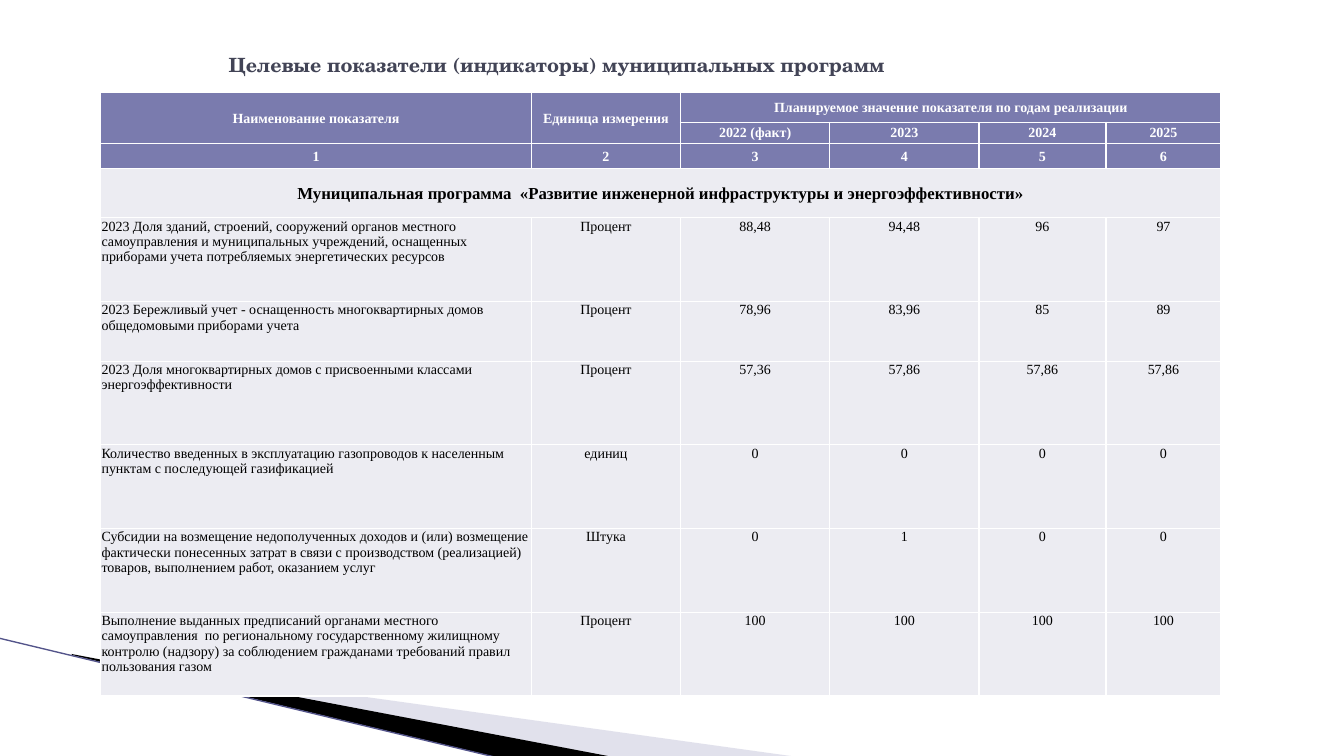
"""Build the slide with target indicators of municipal programmes."""
from lxml import etree
from pptx import Presentation
from pptx.dml.color import RGBColor
from pptx.enum.shapes import MSO_CONNECTOR
from pptx.enum.text import MSO_ANCHOR, PP_ALIGN
from pptx.oxml import parse_xml
from pptx.oxml.ns import qn
from pptx.util import Cm, Pt

STRAIGHT = MSO_CONNECTOR.STRAIGHT
MIDDLE, TOP = MSO_ANCHOR.MIDDLE, MSO_ANCHOR.TOP
LEFT, CENTER = PP_ALIGN.LEFT, PP_ALIGN.CENTER

WHITE = RGBColor(0xFF, 0xFF, 0xFF)
BLACK = RGBColor(0x00, 0x00, 0x00)
TITLE_INK = RGBColor(0x42, 0x44, 0x56)
HEADER_FILL = RGBColor(0x7A, 0x7B, 0xAE)
BODY_FILL = RGBColor(0xEC, 0xEC, 0xF2)
LILAC = RGBColor(0xB6, 0xB6, 0xD1)
VIOLET = RGBColor(0x53, 0x54, 0x8A)

HEADER_ROWS = 3
PROGRAM_ROW = 3
COL_WIDTHS = [10.85, 3.76, 3.76, 3.76, 3.2, 2.9]
ROW_HEIGHTS = [0.74, 0.53, 0.64, 1.24, 2.11, 1.5, 2.11, 2.11, 2.11, 2.11]
ROWS = [
    ["Наименование показателя", "Единица измерения",
     "Планируемое значение показателя по годам реализации", "", "", ""],
    ["", "", "2022 (факт)", "2023", "2024", "2025"],
    ["1", "2", "3", "4", "5", "6"],
    ["Муниципальная программа  «Развитие инженерной инфраструктуры и энергоэффективности»",
     "", "", "", "", ""],
    ["2023 Доля зданий, строений, сооружений органов местного самоуправления и "
     "муниципальных учреждений, оснащенных приборами учета потребляемых "
     "энергетических ресурсов", "Процент", "88,48", "94,48", "96", "97"],
    ["2023 Бережливый учет - оснащенность многоквартирных домов общедомовыми "
     "приборами учета", "Процент", "78,96", "83,96", "85", "89"],
    ["2023 Доля многоквартирных домов с присвоенными классами энергоэффективности",
     "Процент", "57,36", "57,86", "57,86", "57,86"],
    ["Количество введенных в эксплуатацию газопроводов к населенным пунктам с "
     "последующей газификацией", "единиц", "0", "0", "0", "0"],
    ["Субсидии на возмещение недополученных доходов и (или) возмещение фактически "
     "понесенных затрат в связи с производством (реализацией) товаров, выполнением "
     "работ, оказанием услуг", "Штука", "0", "1", "0", "0"],
    ["Выполнение выданных предписаний органами местного самоуправления  по "
     "региональному государственному жилищному контролю (надзору) за соблюдением "
     "граждан" "ами требований правил пользования газом".replace("\n", ""),
     "Процент", "100", "100", "100", "100"],
]
MERGES = [((0, 0), (1, 0)), ((0, 1), (1, 1)), ((0, 2), (0, 5)), ((3, 0), (3, 5))]
WEDGES = [
    (LILAC, 40, [(1.85, 16.54), (20.14, 19.08), (15.44, 19.08), (1.85, 16.51)]),
    (BLACK, 100, [(1.8, 16.48), (15.47, 19.08), (12.6, 19.1), (1.83, 16.51)]),
]
BORDER = (
    '<a:{} xmlns:a="http://schemas.openxmlformats.org/drawingml/2006/main" w="12700">'
    '<a:solidFill><a:srgbClr val="FFFFFF"/></a:solidFill></a:{}>'
)


def add_run(p, text, font, size, color, bold):
    p.font.size = Pt(size)
    if text:
        r = p.add_run()
        r.text = text
        r.font.name = font
        r.font.size = Pt(size)
        r.font.bold = bold
        r.font.color.rgb = color


prs = Presentation()
prs.slide_width, prs.slide_height = Cm(33.87), Cm(19.05)
s = prs.slides.add_slide(prs.slide_layouts[5])

for color, opacity, points in WEDGES:
    corners = [(Cm(x), Cm(y)) for x, y in points]
    builder = s.shapes.build_freeform(*corners[0], scale=1.0)
    builder.add_line_segments(corners[1:], close=True)
    sp = builder.convert_to_shape()
    sp.shadow.inherit = False
    sp.fill.solid()
    sp.fill.fore_color.rgb = color
    sp.line.fill.background()
    if opacity < 100:
        clr = sp.fill._xPr.find(qn("a:solidFill"))[0]
        etree.SubElement(clr, qn("a:alpha"), val=str(opacity * 1000))

edge = s.shapes.add_connector(STRAIGHT, Cm(-0.03), Cm(16.08), Cm(12.57), Cm(19.1))
edge.line.color.rgb = VIOLET
edge.line.width = Pt(0.95)
etree.SubElement(edge._element.spPr, qn("a:effectLst"))

title = s.shapes.title
title.left, title.top, title.width, title.height = Cm(5.51), Cm(0.76), Cm(22.86), Cm(1.75)
tf = title.text_frame
tf.vertical_anchor = MIDDLE
p = tf.paragraphs[0]
p.alignment = LEFT
add_run(p, "Целевые показатели (индикаторы) муниципальных программ",
        "TeX Gyre Schola", 14, TITLE_INK, True)

table = s.shapes.add_table(len(ROWS), len(COL_WIDTHS), Cm(2.54), Cm(2.34),
                           Cm(sum(COL_WIDTHS)), Cm(sum(ROW_HEIGHTS))).table
for column, width in zip(table.columns, COL_WIDTHS):
    column.width = Cm(width)
for row, height in zip(table.rows, ROW_HEIGHTS):
    row.height = Cm(height)
for first, last in MERGES:
    table.cell(*first).merge(table.cell(*last))

for i, texts in enumerate(ROWS):
    is_header = i < HEADER_ROWS
    is_heading = i <= PROGRAM_ROW
    for j, text in enumerate(texts):
        cell = table.cell(i, j)
        cell.margin_left = cell.margin_right = cell.margin_top = Cm(0.02)
        cell.margin_bottom = 0
        cell.vertical_anchor = MIDDLE if is_heading else TOP
        tcPr = cell._tc.get_or_add_tcPr()
        for side in ("lnL", "lnR", "lnT", "lnB"):
            tcPr.append(parse_xml(BORDER.format(side, side)))
        cell.fill.solid()
        cell.fill.fore_color.rgb = HEADER_FILL if is_header else BODY_FILL
        p = cell.text_frame.paragraphs[0]
        p.alignment = CENTER if is_heading or j > 0 else LEFT
        add_run(p, text, "Times New Roman", 12 if i == PROGRAM_ROW else 10,
                WHITE if is_header else BLACK, is_heading)

prs.save("out.pptx")
